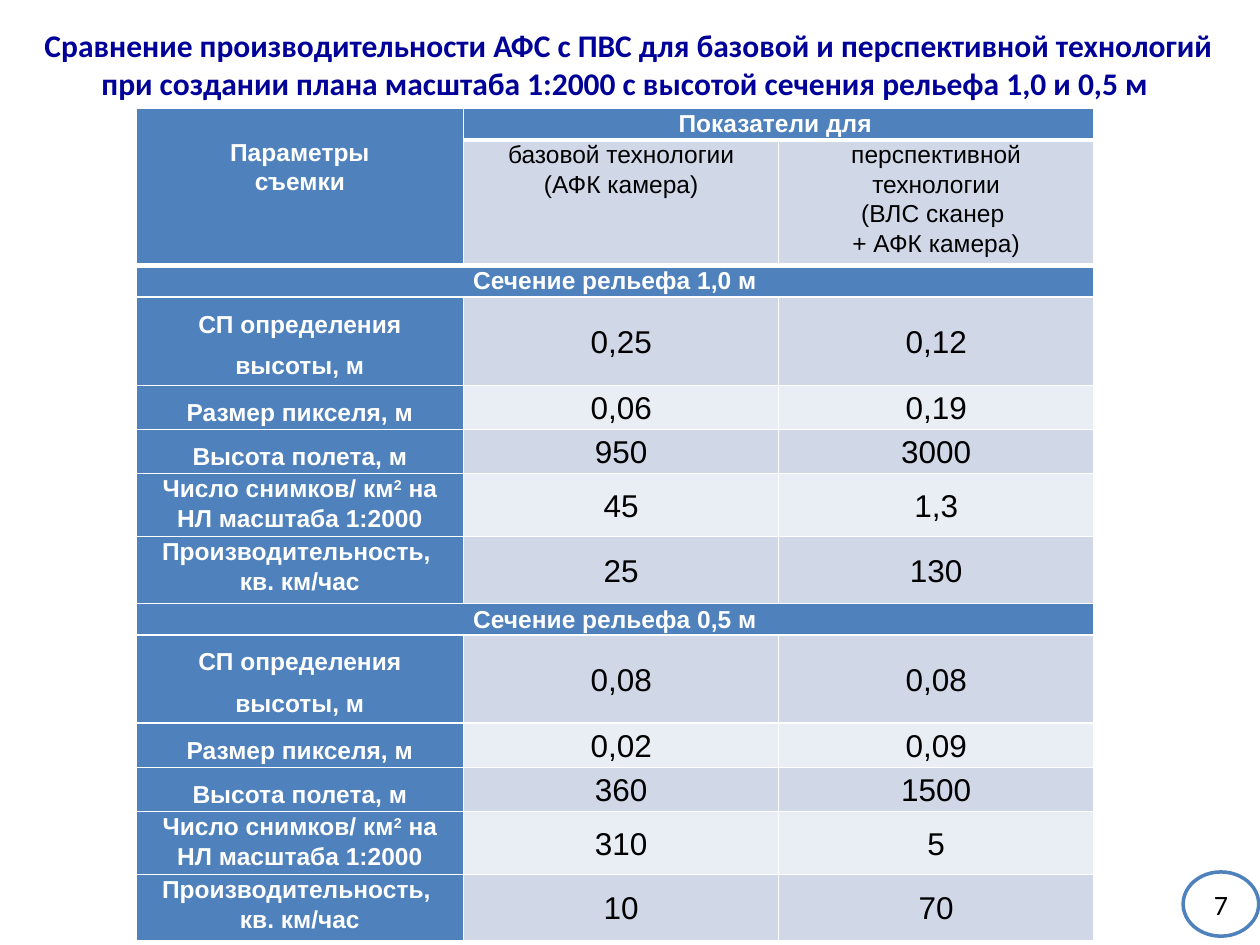
from lxml import etree
from pptx import Presentation, util as u
from pptx.dml.color import RGBColor
from pptx.enum import shapes, text
from pptx.oxml.ns import qn

COLORS = {"blue": "4F81BD", "dark": "D0D8E8", "light": "E9EDF4",
          "white": "FFFFFF", "black": "000000", "navy": "000099"}
TITLE = ("Сравнение производительности АФС с ПВС для базовой и перспективной технологий "
         "при создании плана масштаба 1:2000 с высотой сечения рельефа 1,0 и 0,5 м ")
PAGE_NUMBER = "7"
CORNER = ["Параметры", "съемки"]
GROUP = ["Показатели для "]
TECHNOLOGIES = [["базовой технологии", "(АФК камера)"],
                ["перспективной технологии", "(ВЛС сканер ", "+ АФК камера)"]]
PARAMETERS = [
    (["СП определения высоты, м"], 1.5, 0.41),
    (["Размер пикселя, м"], 1.5, 0.3),
    (["Высота полета, м"], 1.5, 0.3),
    (["Число снимков/ км^2^ на НЛ масштаба 1:2000"], 1.07, 0.47),
    (["Производительность, ", "кв. км/час"], 1.07, 0.53),
]
SECTIONS = [
    ("Сечение рельефа 1,0 м", "t",
     [("0,25", "0,12"), ("0,06", "0,19"), ("950", "3000"), ("45", "1,3"), ("25", "130")]),
    ("Сечение рельефа 0,5 м", "ctr",
     [("0,08", "0,08"), ("0,02", "0,09"), ("360", "1500"), ("310", "5"), ("10", "70")]),
]
COLUMN_WIDTHS = [2.6, 2.5, 2.5]
HEADER_HEIGHTS = [0.23, 0.76]
SECTION_HEIGHT = 0.23
ANCHORS = {"t": text.MSO_ANCHOR.TOP, "ctr": text.MSO_ANCHOR.MIDDLE}


def color(name):
    return RGBColor.from_string(COLORS[name])


def write(frame, lines, size, ink, bold=False, font="Arial", spacing=None):
    for index, line in enumerate(lines):
        paragraph = frame.paragraphs[0] if index == 0 else frame.add_paragraph()
        paragraph.alignment = text.PP_ALIGN.CENTER
        if spacing:
            paragraph.line_spacing = spacing
        paragraph.font.size = u.Pt(size)
        paragraph.font.name = font
        paragraph.font.bold = bold
        paragraph.font.color.rgb = color(ink)
        for part, words in enumerate(line.split("^")):
            run = paragraph.add_run()
            run.text = words
            if part % 2:
                run._r.get_or_add_rPr().set("baseline", "30000")


def add_borders(cell, top, bottom):
    properties = cell._tc.get_or_add_tcPr()
    for side, width in (("L", 1), ("R", 1), ("T", top), ("B", bottom)):
        line = etree.SubElement(properties, qn(f"a:ln{side}"), w=str(u.Pt(width)))
        fill = etree.SubElement(line, qn("a:solidFill"))
        etree.SubElement(fill, qn("a:srgbClr"), val=COLORS["white"])


def fill_cell(cell, lines, fill, size=14, ink="white", bold=True, spacing=1.07, anchor="t"):
    cell.fill.solid()
    cell.fill.fore_color.rgb = color(fill)
    cell.vertical_anchor = ANCHORS[anchor]
    write(cell.text_frame, lines, size, ink, bold, spacing=spacing)


def add_comparison(slide):
    section_heights = [SECTION_HEIGHT] + [height for _, _, height in PARAMETERS]
    heights = HEADER_HEIGHTS + section_heights * len(SECTIONS)
    table = slide.shapes.add_table(
        len(heights), len(COLUMN_WIDTHS), u.Inches(1.08), u.Inches(0.86),
        u.Inches(sum(COLUMN_WIDTHS)), u.Inches(sum(heights))).table
    table.first_row = table.horz_banding = False
    for column, width in zip(table.columns, COLUMN_WIDTHS):
        column.width = u.Inches(width)
    for index, (row, height) in enumerate(zip(table.rows, heights)):
        row.height = u.Inches(height)
        for cell in row.cells:
            cell.margin_left = cell.margin_right = u.Inches(0.06)
            cell.margin_top = cell.margin_bottom = 0
            add_borders(cell, 3 if index in (1, 2) else 1, 3 if index < 2 else 1)

    corner = table.cell(0, 0)
    corner.merge(table.cell(1, 0))
    fill_cell(corner, CORNER, "blue")
    corner.margin_top = u.Inches(0.23)
    table.cell(0, 1).merge(table.cell(0, 2))
    fill_cell(table.cell(0, 1), GROUP, "blue")
    for column, lines in enumerate(TECHNOLOGIES, 1):
        fill_cell(table.cell(1, column), lines, "dark", ink="black", bold=False)

    for section, (heading, anchor, values) in enumerate(SECTIONS):
        start = len(HEADER_HEIGHTS) + section * len(section_heights)
        table.cell(start, 0).merge(table.cell(start, 2))
        fill_cell(table.cell(start, 0), [heading], "blue", anchor=anchor)
        for offset, ((lines, spacing, _), pair) in enumerate(zip(PARAMETERS, values)):
            row = start + 1 + offset
            fill_cell(table.cell(row, 0), lines, "blue", spacing=spacing)
            for column, value in enumerate(pair, 1):
                fill_cell(table.cell(row, column), [value], "light" if offset % 2 else "dark",
                          18, "black", False, anchor="ctr")


def add_page_number(slide):
    badge = slide.shapes.add_shape(shapes.MSO_SHAPE.OVAL, u.Inches(9.39), u.Inches(6.92),
                                   u.Inches(0.6), u.Inches(0.51))
    badge.shadow.inherit = False
    badge.fill.solid()
    badge.fill.fore_color.rgb = color("white")
    badge.line.color.rgb = color("blue")
    badge.line.width = u.Pt(2)
    badge.text_frame.vertical_anchor = text.MSO_ANCHOR.MIDDLE
    write(badge.text_frame, [PAGE_NUMBER], 16, "black", font="Calibri")


def add_title(slide):
    title = slide.shapes.add_textbox(u.Inches(0.24), u.Inches(0.16), u.Inches(9.5), u.Inches(0.71))
    title.text_frame.word_wrap = True
    title.text_frame.auto_size = text.MSO_AUTO_SIZE.SHAPE_TO_FIT_TEXT
    write(title.text_frame, [TITLE], 18, "navy", True, "Calibri")


def main():
    presentation = Presentation()
    presentation.slide_width, presentation.slide_height = u.Inches(10), u.Inches(7.5)
    slide = presentation.slides.add_slide(presentation.slide_layouts[6])
    add_page_number(slide)
    add_title(slide)
    add_comparison(slide)
    presentation.save("out.pptx")


if __name__ == "__main__":
    main()
